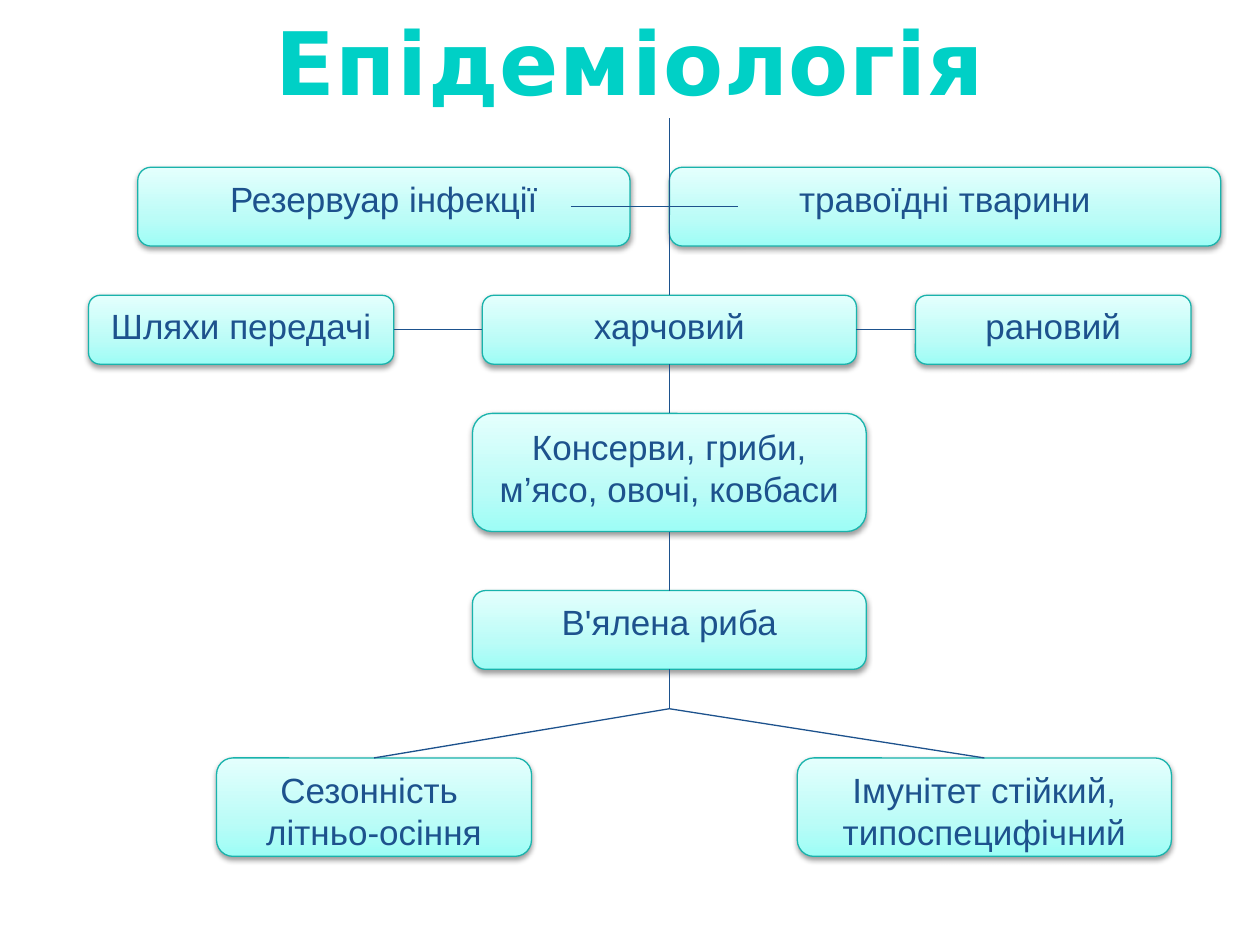
from copy import deepcopy

from lxml.etree import SubElement
from pptx import Presentation
from pptx.dml.color import RGBColor
from pptx.enum.shapes import MSO_CONNECTOR, MSO_SHAPE
from pptx.enum.text import MSO_ANCHOR, PP_ALIGN
from pptx.oxml.ns import qn
from pptx.util import Inches, Pt

COLUMNS, ROWS = 128, 96
WIDTH, HEIGHT = Inches(10), Inches(7.5)
COLORS = {
    "ink": "1D528D",
    "border": "19B3AC",
    "shadow": "000000",
    "box_bottom": "9DFDF6",
    "box_middle": "BBFCF7",
    "box_top": "E4FFFD",
    "title_top": "00D0C6",
    "title_bottom": "00938C",
}
BOX_STOPS = [(0, "box_bottom"), (0.35, "box_middle"), (1, "box_top")]
TITLE_STOPS = [(0.25, "title_top"), (1, "title_bottom")]
TRUNK = 68
FORK = 72

BOXES = [
    ("Резервуар інфекції", 14, 17, 50, 8),
    ("травоїдні тварини", TRUNK, 17, 56, 8),
    ("Шляхи передачі", 9, 30, 31, 7),
    ("харчовий", 49, 30, 38, 7),
    ("рановий", 93, 30, 28, 7),
    ("Консерви, гриби, м’ясо, овочі, ковбаси", 48, 42, 40, 12),
    ("В'ялена риба", 48, 60, 40, 8),
    ("Сезонність \nлітньо-осіння", 22, 77, 32, 10),
    ("Імунітет стійкий, типоспецифічний", 81, 77, 38, 10),
]
LINES = [
    (TRUNK, 12, TRUNK, 30),
    (40, 33.5, 49, 33.5),
    (87, 33.5, 93, 33.5),
    (TRUNK, 37, TRUNK, 42),
    (TRUNK, 54, TRUNK, 60),
    (TRUNK, 68, TRUNK, FORK),
    (TRUNK, FORK, 38, 77),
    (TRUNK, FORK, 100, 77),
    (58, 21, 75, 21),
]


def color(name):
    """Return the named colour."""
    return RGBColor.from_string(COLORS[name])


def grid(*values):
    """Turn alternating columns and rows into slide lengths."""
    units = (WIDTH / COLUMNS, HEIGHT / ROWS)
    return [round(value * units[index % 2]) for index, value in enumerate(values)]


def set_gradient(fill, element, stops, angle):
    """Apply a linear gradient with any number of stops."""
    fill.gradient()
    fill.gradient_angle = angle
    stop_list = next(element.iter(qn("a:gsLst")))
    while len(stop_list) < len(stops):
        stop_list.append(deepcopy(stop_list[-1]))
    for stop, (position, name) in zip(fill.gradient_stops, stops):
        stop.position = position
        stop.color.rgb = color(name)


def write_text(shape, text, font="Arial", size=20, bold=False, anchor=MSO_ANCHOR.TOP,
               stops=None, spacing=None):
    """Write centred paragraphs, one for each line of the text."""
    frame = shape.text_frame
    frame.word_wrap = True
    frame.vertical_anchor = anchor
    for index, line in enumerate(text.split("\n")):
        paragraph = frame.add_paragraph() if index else frame.paragraphs[0]
        paragraph.alignment = PP_ALIGN.CENTER
        run = paragraph.add_run()
        run.text = line
        run.font.name, run.font.size, run.font.bold = font, Pt(size), bold
        if stops:
            set_gradient(run.font.fill, run._r, stops, 270)
        else:
            run.font.color.rgb = color("ink")
        if spacing:
            run._r.get_or_add_rPr().set("spc", str(round(spacing * 100)))


def add_shadow(shape):
    """Give the shape a soft shadow below it."""
    shape.shadow.inherit = False
    effects = shape._element.spPr.find(qn("a:effectLst"))
    shadow = SubElement(effects, qn("a:outerShdw"), blurRad="40000", dist="20000",
                        dir="5400000", rotWithShape="0")
    shade = SubElement(shadow, qn("a:srgbClr"), val=COLORS["shadow"])
    SubElement(shade, qn("a:alpha"), val="38000")


def add_title(slide, text):
    """Add the slide heading."""
    title = slide.shapes.add_textbox(
        round(WIDTH * 0.05), Inches(0.17), round(WIDTH * 0.9), Inches(0.62))
    write_text(title, text, font="DejaVu Sans", size=50, bold=True,
               anchor=MSO_ANCHOR.MIDDLE, stops=TITLE_STOPS, spacing=0.5)


def add_box(slide, text, *place):
    """Add a rounded box with its text."""
    box = slide.shapes.add_shape(MSO_SHAPE.ROUNDED_RECTANGLE, *grid(*place))
    set_gradient(box.fill, box._element, BOX_STOPS, 90)
    box.line.color.rgb = color("border")
    box.line.width = Pt(0.75)
    add_shadow(box)
    write_text(box, text)


def add_line(slide, *ends):
    """Add a straight line between two grid points."""
    line = slide.shapes.add_connector(MSO_CONNECTOR.STRAIGHT, *grid(*ends))
    line.line.color.rgb = color("ink")
    line.line.width = Pt(0.75)
    SubElement(line._element.spPr, qn("a:effectLst"))


def main():
    """Build and save the slide."""
    presentation = Presentation()
    presentation.slide_width, presentation.slide_height = WIDTH, HEIGHT
    slide = presentation.slides.add_slide(presentation.slide_layouts[6])
    add_title(slide, "Епідеміологія")
    for box in BOXES:
        add_box(slide, *box)
    for line in LINES:
        add_line(slide, *line)
    presentation.save("out.pptx")


if __name__ == "__main__":
    main()
